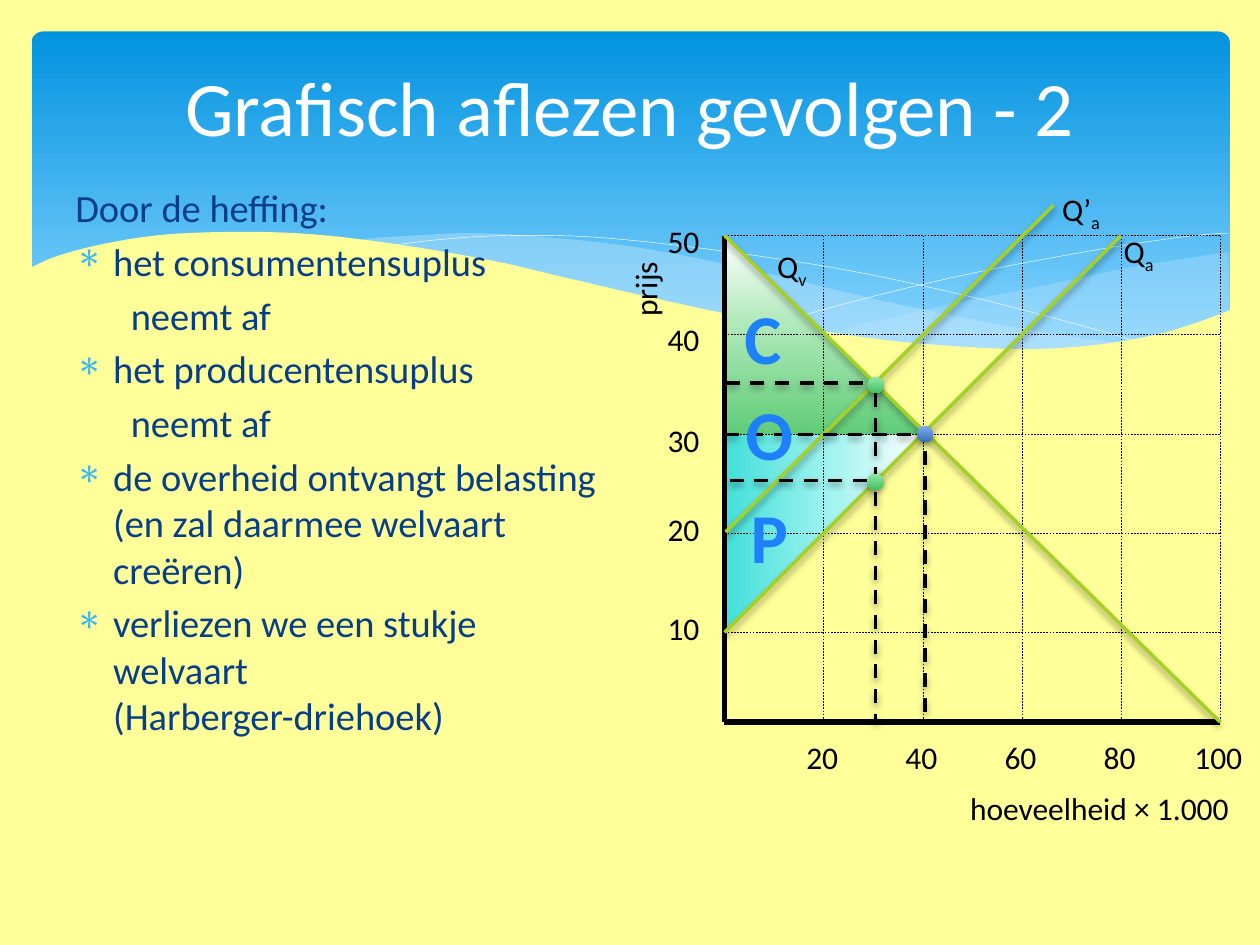
from dataclasses import dataclass

import lxml.etree as etree
import pptx
import pptx.dml.color
import pptx.enum.dml
import pptx.enum.shapes
import pptx.enum.text
import pptx.oxml.ns
import pptx.util

Pt = pptx.util.Pt
qn = pptx.oxml.ns.qn
Kind = pptx.enum.shapes.MSO_SHAPE
FONT = "Calibri"
HEX = {
    "page": "FFFF99", "wave": "C6E7FC", "white": "FFFFFF", "black": "000000",
    "navy": "073E87", "bullet": "31B6FD", "lime": "A5D028", "letter": "1E80FA",
    "edge": "5BD078",
}
SKY = [(0, "0293E0"), (90, "83D3FE")]
GREEN = [(0, "FFFFFF"), (44, "B1E9BB"), (100, "61CD78")]
TEAL = [(0, "FFFFFF"), (44, "A5F4F0"), (100, "42DFD9")]
LEAF = [(0, "92E8A6"), (100, "41BF60")]
BLUE = [(0, "80ACEA"), (100, "3570BA")]

LEFT, TOP, BASE = 414, 134.6, 412.6
STEP = 56.65
RIGHT = LEFT + 5 * STEP


@dataclass
class Label:
    text: str
    x: float
    y: float
    w: float
    h: float = 29
    sub: str = ""
    turn: int = 0
    size: int = 18
    bold: bool = False
    tint: str = "black"


@dataclass
class Rule:
    start: tuple[float, float]
    end: tuple[float, float]
    width: float
    tint: str = "black"
    dash: bool = False
    shade: bool = False


@dataclass
class Wave:
    knots: list[tuple[float, float]]
    tint: str = "wave"
    alpha: int = 100
    open: bool = False
    base: float = 0


WAVES = [
    Wave([(702, 144), (682.6, 146.9), (641.5, 153.6), (599, 162.7), (542.2, 174.2),
          (476, 190.8), (517.7, 196), (553.7, 199), (586, 200), (621.4, 198),
          (651.6, 193.7), (683.3, 185), (702.7, 177.8)], alpha=29),
    Wave([(643, 196.6), (602.6, 190.8), (558, 183), (508.3, 172.8), (452.9, 159.8),
          (409.7, 149.8), (361.4, 141), (318, 136), (273.6, 133.2), (236, 134.6),
          (206, 137.5), (246, 143.3), (290.9, 151.9), (353.5, 167), (420.5, 181.4),
          (478.8, 191.5), (529.9, 198), (573, 200), (610.2, 199.4), (643, 196.6)], alpha=40),
    Wave([(222.5, 140.4), (252, 136.8), (288.7, 134.6), (337.7, 135.4), (400.3, 141.8),
          (478.8, 153.4), (547.2, 167.8), (598.3, 180.7), (653, 195.8)], "white", open=True),
    Wave([(441.4, 185), (500.4, 169), (558.7, 155.5), (623.5, 143.3), (675.4, 135.4),
          (702, 133.2)], "white", open=True),
    Wave([(16.6, 153.4), (33, 146.2), (61, 139), (95, 134), (139, 132.5), (180, 134),
          (227.5, 139.7), (281.5, 149), (322, 158.4), (381, 172), (434, 183), (495.4, 193),
          (548, 198), (592.6, 199.4), (630, 196.6), (662.4, 190.8), (684, 184.3),
          (703.4, 177)], "page", base=237),
]
POINTS = [
    ("", "Door de heffing:"),
    ("∗", "het consumentensuplus"),
    ("in", "neemt af"),
    ("∗", "het producentensuplus"),
    ("in", "neemt af"),
    ("∗", "de overheid ontvangt belasting (en zal daarmee welvaart creëren)"),
    ("∗", "verliezen we een stukje welvaart \v(Harberger-driehoek)"),
]


def rgb(tint: str):
    return pptx.dml.color.RGBColor.from_string(HEX[tint])


def style(run, size: float, tint: str) -> None:
    run.font.name, run.font.size = FONT, Pt(size)
    run.font.color.rgb = rgb(tint)


def cast(shape, shade: bool = False) -> None:
    """Set the outer shadow, or none; call after fill and line."""
    props = shape.element.spPr
    list_ = props.find(qn("a:effectLst"))
    if list_ is None:
        list_ = etree.SubElement(props, qn("a:effectLst"))
    if shade:
        drop = etree.SubElement(list_, qn("a:outerShdw"), blurRad=str(Pt(4)),
                                dist=str(Pt(2)), dir="5400000", rotWithShape="0")
        ink = etree.SubElement(drop, qn("a:srgbClr"), val=HEX["black"])
        etree.SubElement(ink, qn("a:alpha"), val="38000")


def blend(shape, stops: list[tuple[int, str]]) -> None:
    """Fill from top to bottom with the given stops."""
    shape.fill.gradient()
    shape.fill.gradient_angle = 270
    list_ = shape.element.spPr.find(qn("a:gradFill")).find(qn("a:gsLst"))
    for old in list(list_):
        list_.remove(old)
    for pos, code in stops:
        stop = etree.SubElement(list_, qn("a:gs"), pos=str(pos * 1000))
        etree.SubElement(stop, qn("a:srgbClr"), val=code)


def block(slide, kind, x, y, w, h, stops, edge: str = "", shade: bool = False):
    shape = slide.shapes.add_shape(kind, Pt(x), Pt(y), Pt(w), Pt(h))
    blend(shape, stops)
    if edge:
        shape.line.color.rgb = rgb(edge)
        shape.line.width = Pt(0.75)
    else:
        shape.line.fill.background()
    cast(shape, shade)
    return shape


def curve(knots: list[tuple[float, float]], parts: int = 5) -> list[tuple[float, float]]:
    """Points of a Catmull-Rom curve through the knots."""
    ends = [knots[0], *knots, knots[-1]]
    out = [knots[0]]
    for a, b, c, d in zip(ends, ends[1:], ends[2:], ends[3:]):
        for t in (i / parts for i in range(1, parts + 1)):
            out.append(tuple(
                (2 * q + (r - p) * t + (2 * p - 5 * q + 4 * r - s) * t**2
                 + (3 * q - p - 3 * r + s) * t**3) / 2
                for p, q, r, s in zip(a, b, c, d)))
    return out


def swell(slide, wave: Wave) -> None:
    spots = curve(wave.knots)
    if wave.base:
        spots += [(spots[-1][0], wave.base), (spots[0][0], wave.base)]
    first, *rest = [(Pt(x), Pt(y)) for x, y in spots]
    path = slide.shapes.build_freeform(*first)
    path.add_line_segments(rest, close=not wave.open)
    shape = path.convert_to_shape()
    if wave.open:
        shape.fill.background()
        shape.line.color.rgb = rgb(wave.tint)
        shape.line.width = Pt(0.25)
    else:
        shape.fill.solid()
        shape.fill.fore_color.rgb = rgb(wave.tint)
        shape.line.fill.background()
        ink = shape.element.spPr.find(qn("a:solidFill"))[0]
        etree.SubElement(ink, qn("a:alpha"), val=str(wave.alpha * 1000))
    cast(shape)


def draw(slide, rule: Rule) -> None:
    ends = [Pt(v) for v in (*rule.start, *rule.end)]
    line = slide.shapes.add_connector(pptx.enum.shapes.MSO_CONNECTOR.STRAIGHT, *ends)
    line.line.color.rgb = rgb(rule.tint)
    line.line.width = Pt(rule.width)
    if rule.dash:
        line.line.dash_style = pptx.enum.dml.MSO_LINE.DASH
    cast(line, rule.shade)


def write(slide, label: Label) -> None:
    box = slide.shapes.add_textbox(Pt(label.x), Pt(label.y), Pt(label.w), Pt(label.h))
    box.rotation = label.turn
    box.text_frame.word_wrap = False
    para = box.text_frame.paragraphs[0]
    para.text = label.text
    if label.sub:
        para.add_run().text = label.sub
        para.runs[1].font._element.set("baseline", "-25000")
    for run in para.runs:
        style(run, label.size, label.tint)
        run.font.bold = label.bold


def listing(slide) -> None:
    frame = slide.shapes.add_textbox(Pt(36), Pt(101.5), Pt(318), Pt(405)).text_frame
    frame.word_wrap = True
    for i, (mark, text) in enumerate(POINTS):
        para = frame.add_paragraph() if i else frame.paragraphs[0]
        para.text = text
        para.space_before = Pt(4.4)
        for run in para.runs:
            style(run, 22, "navy")
        props = para._p.get_or_add_pPr()
        if mark == "in":
            props.set("marL", str(Pt(31.7)))
        elif mark:
            props.set("marL", str(Pt(21.6)))
            props.set("indent", str(Pt(-21.6)))
            tone = etree.SubElement(props, qn("a:buClr"))
            etree.SubElement(tone, qn("a:srgbClr"), val=HEX["bullet"])
            etree.SubElement(props, qn("a:buChar"), char=mark)


def head(slide) -> None:
    title = slide.shapes.title
    title.left, title.top, title.width, title.height = Pt(36), Pt(26.6), Pt(648), Pt(67.7)
    title.text_frame.text = "Grafisch aflezen gevolgen - 2"
    title.text_frame.vertical_anchor = pptx.enum.text.MSO_ANCHOR.MIDDLE
    para = title.text_frame.paragraphs[0]
    para.alignment = pptx.enum.text.PP_ALIGN.CENTER
    style(para.runs[0], 44, "white")
    title.element.getparent().append(title.element)


def graph(slide) -> None:
    side = 2 * STEP
    block(slide, Kind.RIGHT_TRIANGLE, LEFT, 247.9, side, side, TEAL).rotation = 90
    block(slide, Kind.RIGHT_TRIANGLE, LEFT, TOP, side, side, GREEN, "edge")
    rules = [Rule((LEFT, TOP), (LEFT, BASE), 3), Rule((RIGHT, BASE), (LEFT, BASE), 3)]
    for i in range(5):
        x, y = LEFT + (i + 1) * STEP, TOP + i * STEP
        rules += [Rule((LEFT, y), (RIGHT, y), 0.25, dash=True),
                  Rule((x, TOP), (x, BASE), 0.25, dash=True)]
    slopes = [((LEFT, TOP), (RIGHT, BASE)), ((LEFT, 361.4), (640.6, TOP)),
              ((414.7, 304), (602, 117.2))]
    rules += [Rule(*ends, 2, "lime", shade=True) for ends in slopes]
    guides = [((LEFT, 248.2), (527.2, 248.2)), ((414.7, 219), (494, 219)),
              ((528.7, 257.8), (528.7, BASE)), ((500.4, 224.6), (500.4, BASE)),
              ((417, 274.5), (496, 274.5))]
    rules += [Rule(*ends, 2, dash=True, shade=True) for ends in guides]
    for rule in rules:
        draw(slide, rule)
    for x, y, stops in [(500.4, 220, LEAF), (500.4, 275.4, LEAF), (528.7, 248, BLUE)]:
        block(slide, Kind.OVAL, x - 4.7, y - 4.7, 9.4, 9.4, stops, shade=True)

    prices = zip((50, 40, 30, 20, 10), (123.1, 179.3, 236.9, 288, 344.2))
    labels = [Label(str(p), 374.4, y, 33) for p, y in prices]
    labels += [Label(str(20 * i), 397 + i * STEP, 418.3, 33) for i in range(1, 5)]
    labels += [
        Label("100", 675.4, 418.3, 42.5),
        Label("hoeveelheid × 1.000", 547.2, 447.1, 164.2),
        Label("prijs", 345.6, 150.5, 46, turn=270),
        Label("Q", 437, 137.5, 32.4, sub="v"),
        Label("Q", 635, 128.9, 32.4, sub="a"),
        Label("Q’", 599.8, 105.1, 36.7, sub="a"),
    ]
    labels += [Label(text, x, y, w, 55.4, size=40, bold=True, tint="letter")
               for text, x, y, w in [("C", 418.3, 164.9, 36.7), ("P", 421.9, 278.6, 36.7),
                                     ("O", 419, 219.6, 42.5)]]
    for label in labels:
        write(slide, label)


def main() -> None:
    deck = pptx.Presentation()
    deck.slide_width, deck.slide_height = Pt(720), Pt(540)
    slide = deck.slides.add_slide(deck.slide_layouts[5])
    slide.background.fill.solid()
    slide.background.fill.fore_color.rgb = rgb("page")
    panel = block(slide, Kind.ROUNDED_RECTANGLE, 18, 18, 684.7, 194.4, SKY)
    panel.adjustments[0] = 0.034
    for wave in WAVES:
        swell(slide, wave)
    listing(slide)
    head(slide)
    graph(slide)
    deck.save("out.pptx")


if __name__ == "__main__":
    main()
